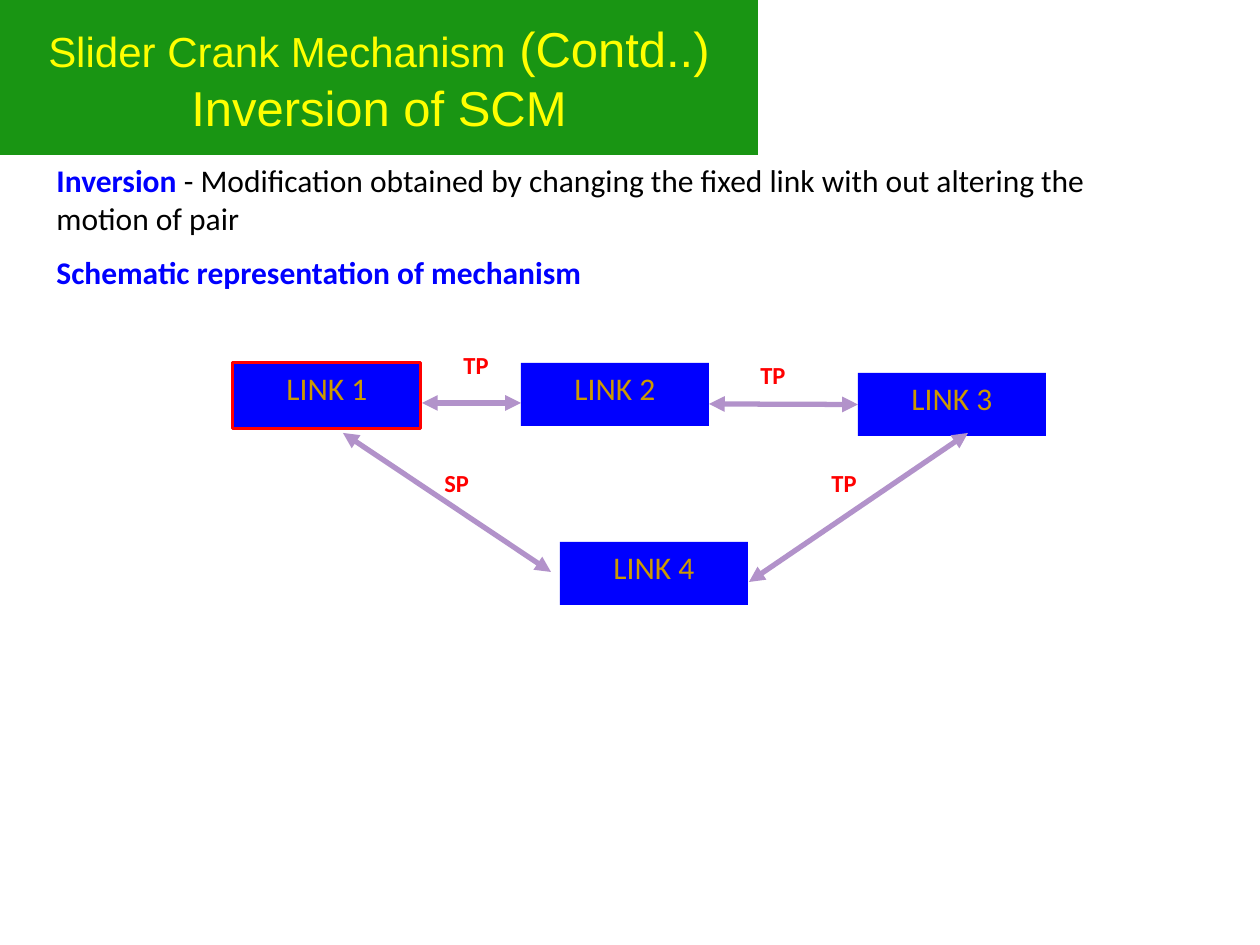
from dataclasses import dataclass

from lxml import etree
from pptx import Presentation
from pptx.dml.color import RGBColor
from pptx.enum.shapes import MSO_CONNECTOR as CONN, MSO_SHAPE as SHAPE
from pptx.enum.text import MSO_ANCHOR as ANCHOR, PP_ALIGN as ALIGN
from pptx.oxml.ns import qn
from pptx.util import Emu, Pt

PX = 914400 // 126


@dataclass(frozen=True)
class Theme:
    """Colours, fonts and type sizes of the slide."""
    green: str = "199513"
    yellow: str = "FFFF00"
    blue: str = "0000FF"
    red: str = "FF0000"
    gold: str = "CC9900"
    lilac: str = "B292CA"
    black: str = "000000"
    heading: str = "Arial"
    body: str = "Calibri"
    title_small: int = 24
    title_large: int = 28
    text: int = 18
    label: int = 14


T = Theme()


def px(*values):
    """Turn pixel lengths into EMU."""
    return [Emu(v * PX) for v in values]


def rgb(value):
    """Turn a hex string into a colour."""
    return RGBColor.from_string(value)


def style(r, size, color, font=T.body, bold=False):
    """Set the font of a run."""
    r.font.name = font
    r.font.size = Pt(size)
    r.font.bold = bold
    r.font.color.rgb = rgb(color)


def add_run(p, text, *args, **kwargs):
    """Append a styled run to a paragraph."""
    r = p.add_run()
    r.text = text
    style(r, *args, **kwargs)


def add_rect(s, box, fill, border=None):
    """Add a flat rectangle and return it."""
    sp = s.shapes.add_shape(SHAPE.RECTANGLE, *px(*box))
    sp.shadow.inherit = False
    sp.fill.solid()
    sp.fill.fore_color.rgb = rgb(fill)
    if border:
        sp.line.color.rgb = rgb(border)
        sp.line.width = Pt(1.75)
    else:
        sp.line.fill.background()
    return sp


def add_title(s):
    """Add the title band with its two lines."""
    tf = add_rect(s, (0, 0, 758, 155), T.green).text_frame
    tf.vertical_anchor = ANCHOR.MIDDLE
    p = tf.paragraphs[0]
    p.alignment = ALIGN.CENTER
    add_run(p, "Slider Crank Mechanism", T.title_small, T.yellow, T.heading)
    add_run(p, " (Contd..)", T.title_large, T.yellow, T.heading)
    p.add_line_break()
    add_run(p, "Inversion of SCM", T.title_large, T.yellow, T.heading)


def add_definition(s):
    """Add the definition and the heading of the diagram."""
    tf = s.shapes.add_textbox(*px(44, 155, 1121, 189)).text_frame
    tf.word_wrap = True
    p = tf.paragraphs[0]
    add_run(p, "Inversion ", T.text, T.blue, bold=True)
    add_run(p, "- Modification obtained by changing the fixed link with out "
            "altering the motion of pair", T.text, T.black)
    p = tf.add_paragraph()
    p.space_before = Pt(9)
    add_run(p, "Schematic representation of mechanism", T.text, T.blue, bold=True)


def add_link(s, number, left, top, height=63, border=None):
    """Add one link box and return it."""
    sp = add_rect(s, (left, top, 188, height), T.blue, border)
    tf = sp.text_frame
    tf.vertical_anchor = ANCHOR.TOP
    tf.text = f"LINK {number}"
    p = tf.paragraphs[0]
    p.alignment = ALIGN.CENTER
    style(p.runs[0], T.text, T.gold)
    return sp


def add_arrow(s, *ends):
    """Add a line with an arrowhead at both ends and return it."""
    c = s.shapes.add_connector(CONN.STRAIGHT, *px(*ends))
    c.line.color.rgb = rgb(T.lilac)
    c.line.width = Pt(3)
    ln = c.line._get_or_add_ln()
    for tag in ("a:headEnd", "a:tailEnd"):
        etree.SubElement(ln, qn(tag), type="triangle")
    etree.SubElement(c._element.spPr, qn("a:effectLst"))
    return c


def add_pair_label(s, text, left, top):
    """Add the name of a kinematic pair."""
    tf = s.shapes.add_textbox(*px(left, top, 59, 42)).text_frame
    tf.word_wrap = True
    tf.text = text
    style(tf.paragraphs[0].runs[0], T.label, T.red, bold=True)


def main():
    """Build the slide and save it."""
    prs = Presentation()
    prs.slide_width, prs.slide_height = px(1260, 945)
    s = prs.slides.add_slide(prs.slide_layouts[6])
    add_title(s)
    add_definition(s)

    add_link(s, 1, 233, 363, 66, T.red)
    add_link(s, 4, 560, 542)
    add_link(s, 2, 521, 363)
    link_3 = add_link(s, 3, 858, 373)

    add_arrow(s, 422, 403, 521, 403)
    add_arrow(s, 709, 404, 858, 404).end_connect(link_3, 1)
    add_arrow(s, 343, 433, 551, 572)
    add_arrow(s, 749, 582, 968, 433)

    for text, left, top in (("TP", 451, 344), ("TP", 748, 354),
                            ("SP", 432, 462), ("TP", 819, 462)):
        add_pair_label(s, text, left, top)
    prs.save("out.pptx")


if __name__ == "__main__":
    main()
